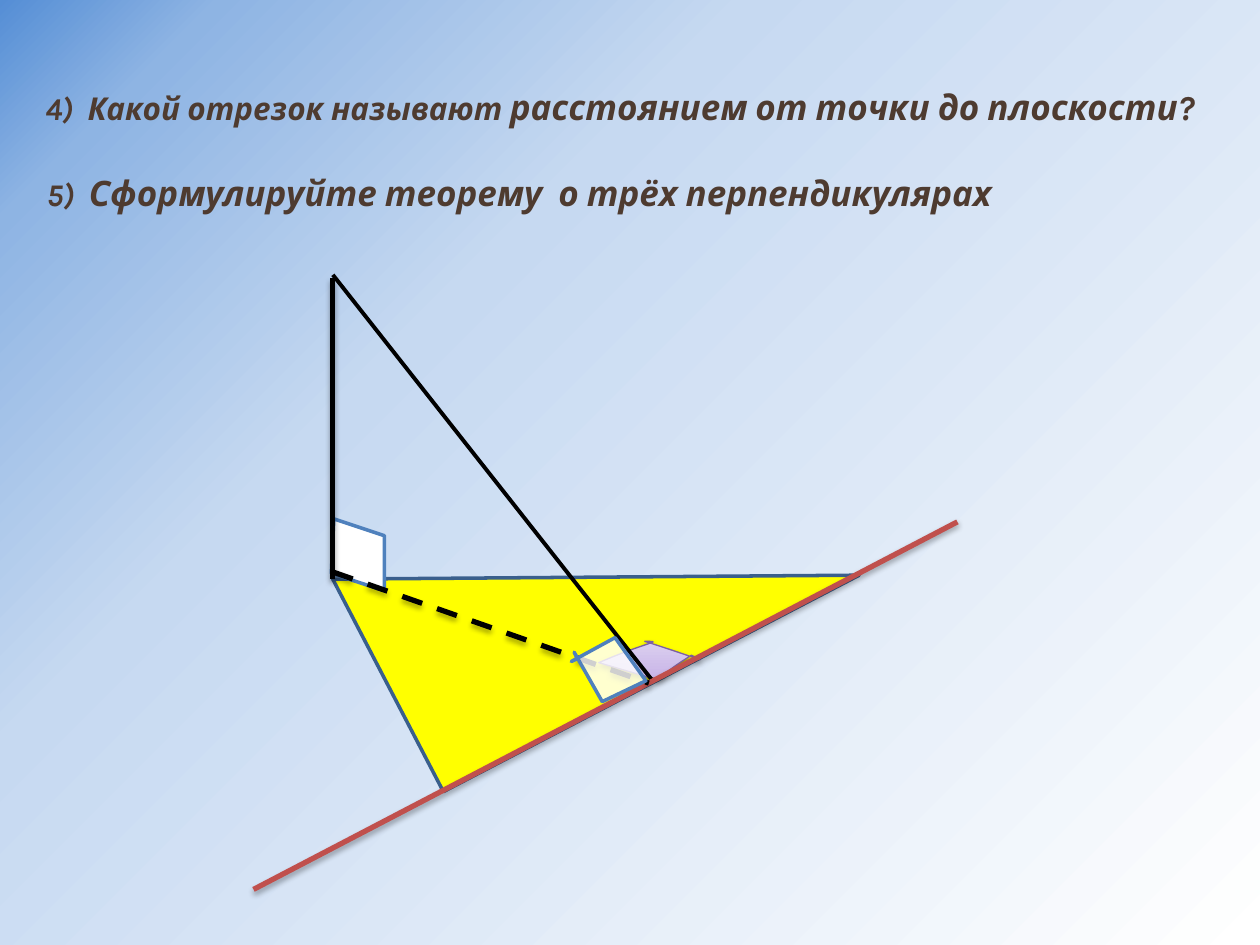
from dataclasses import dataclass
from typing import Optional

from lxml import etree
from pptx import Presentation
from pptx.dml.color import RGBColor
from pptx.enum.dml import MSO_LINE
from pptx.enum.shapes import MSO_CONNECTOR, MSO_SHAPE
from pptx.enum.text import MSO_AUTO_SIZE
from pptx.oxml.ns import qn
from pptx.util import Cm, Pt

STRAIGHT = MSO_CONNECTOR.STRAIGHT
RIGHT_TRIANGLE = MSO_SHAPE.RIGHT_TRIANGLE
DASH = MSO_LINE.DASH
FIT_SHAPE = MSO_AUTO_SIZE.SHAPE_TO_FIT_TEXT
FONT = "Karla"
CURVE_STEPS = 10
COLORS = {
    "text": "4E3B30", "plane": "FFFF00", "plane_edge": "3A5F8C", "black": "000000",
    "red": "C0504D", "white": "FFFFFF", "blue": "4F81BD", "violet": "7D60A0",
}
SKY_STOPS = [(0, "558ED5"), (10, "8EB4E3"), (34, "C6D9F1"), (100, "FFFFFF")]
LILAC_STOPS = [(0, "C9B5E8"), (88, "D8CBEE"), (100, "F0EAF9")]

Point = tuple[float, float]


@dataclass
class Question:
    left: float
    top: float
    width: float
    wording: list[tuple[str, int]]


@dataclass
class Segment:
    start: Point
    end: Point
    color: str
    weight: float
    shadow: bool = True
    dashed: bool = False


@dataclass
class Outline:
    points: list[Point]
    edge: str
    weight: float
    opacity: int = 100
    rotation: float = 0
    stops: Optional[list[tuple[int, str]]] = None
    shadow: bool = False


def rgb(name: str) -> RGBColor:
    return RGBColor.from_string(COLORS[name])


def child(parent, tag: str, **attributes):
    return etree.SubElement(parent, qn(tag), {key: str(value) for key, value in attributes.items()})


def fill_gradient(fill, owner, stops: list[tuple[int, str]], circular: bool) -> None:
    fill.gradient()
    gradient = next(owner.iter(qn("a:gradFill")))
    for element in list(gradient):
        gradient.remove(element)
    stop_list = child(gradient, "a:gsLst")
    for position, color in stops:
        stop = child(stop_list, "a:gs", pos=position * 1000)
        child(stop, "a:srgbClr", val=color)
    if circular:
        route = child(gradient, "a:path", path="circle")
        child(route, "a:fillToRect", r=100000, b=100000)
    else:
        child(gradient, "a:lin", ang=16200000, scaled=1)


def set_effects(item, shadow: bool, opacity: int = 35) -> None:
    effects = child(item.element.spPr, "a:effectLst")
    if shadow:
        outer = child(effects, "a:outerShdw", blurRad=Pt(3.1), dist=Pt(1.8),
                      dir=5400000, rotWithShape=0)
        color = child(outer, "a:srgbClr", val=COLORS["black"])
        child(color, "a:alpha", val=opacity * 1000)


def curve(start: Point, first: Point, second: Point, end: Point) -> list[Point]:
    points = []
    for step in range(1, CURVE_STEPS + 1):
        t = step / CURVE_STEPS
        weights = ((1 - t) ** 3, 3 * t * (1 - t) ** 2, 3 * t * t * (1 - t), t ** 3)
        x, y = (sum(weight * value for weight, value in zip(weights, axis))
                for axis in zip(start, first, second, end))
        points.append((x, y))
    return points


def add_question(slide, question: Question) -> None:
    box = slide.shapes.add_textbox(Cm(question.left), Cm(question.top), Cm(question.width), Cm(1.12))
    frame = box.text_frame
    frame.word_wrap = False
    frame.auto_size = FIT_SHAPE
    para = frame.paragraphs[0]
    para.space_before = Pt(4)
    properties = para._p.get_or_add_pPr()
    properties.set("marL", str(Cm(0.95)))
    properties.set("indent", str(-Cm(0.95)))
    for text, size in question.wording:
        span = para.add_run()
        span.text = text
        span.font.name = FONT
        span.font.size = Pt(size)
        span.font.bold = span.font.italic = True
        span.font.color.rgb = rgb("text")


def add_plane(slide) -> None:
    plane = slide.shapes.add_shape(RIGHT_TRIANGLE, Cm(7.29), Cm(9.22), Cm(9.45), Cm(4.83))
    plane.rotation = 332.5
    plane.fill.solid()
    plane.fill.fore_color.rgb = rgb("plane")
    plane.line.color.rgb = rgb("plane_edge")
    plane.line.width = Pt(2)
    plane.shadow.inherit = False


def add_segment(slide, segment: Segment) -> None:
    ends = [Cm(value) for value in (*segment.start, *segment.end)]
    connector = slide.shapes.add_connector(STRAIGHT, *ends)
    connector.line.color.rgb = rgb(segment.color)
    connector.line.width = Pt(segment.weight)
    if segment.dashed:
        connector.line.dash_style = DASH
    set_effects(connector, segment.shadow)


def add_outline(slide, outline: Outline) -> None:
    points = [(Cm(x), Cm(y)) for x, y in outline.points]
    builder = slide.shapes.build_freeform(*points[0])
    builder.add_line_segments(points[1:], close=True)
    shape = builder.convert_to_shape()
    shape.rotation = outline.rotation
    if outline.stops:
        fill_gradient(shape.fill, shape.element, outline.stops, circular=False)
    else:
        shape.fill.solid()
        shape.fill.fore_color.rgb = rgb("white")
        if outline.opacity < 100:
            color = next(shape.element.spPr.iter(qn("a:srgbClr")))
            child(color, "a:alpha", val=outline.opacity * 1000)
    shape.line.color.rgb = rgb(outline.edge)
    shape.line.width = Pt(outline.weight)
    set_effects(shape, outline.shadow, opacity=38)


QUESTIONS = [
    Question(0.66, 1.6, 24.51, [("4)  Какой отрезок называют ", 18),
                                ("расстоянием от точки до плоскости?", 20)]),
    Question(0.69, 3.33, 20.12, [("5)  ", 18),
                                 ("Сформулируйте теорему  о трёх перпендикулярах", 20)]),
]
LEFT, TOP, RIGHT, BOTTOM = (12.07, 13.36), (13, 12.93), (13.94, 13.21), (13.13, 13.67)
LILAC_ANGLE = Outline(
    [LEFT, *curve(LEFT, (13.06, 12.93), (13.41, 12.93), TOP),
     *curve(TOP, (14.05, 13.26), (14.35, 13.41), RIGHT),
     *curve(RIGHT, (13.16, 13.69), (13.46, 13.67), BOTTOM)],
    "violet", 0.75, stops=LILAC_STOPS, shadow=True)
UPPER_ANGLE = Outline([(6.68, 11.56), (7.75, 11.91), (7.75, 10.8), (6.73, 10.46)], "blue", 2)
LOWER_ANGLE = Outline(
    [(11.56, 13.18), (12.17, 14.15), (13.03, 13.69), (12.37, 12.85), (11.51, 13.37), (11.63, 13.31)],
    "blue", 2, opacity=81, rotation=2.6)
OBLIQUE = Segment((6.71, 5.54), (13.13, 13.69), "black", 2.25, shadow=False)
PLANE_LINE = Segment((5.11, 17.93), (19.3, 10.52), "red", 3)
PERPENDICULAR = Segment((6.71, 5.61), (6.71, 11.68), "black", 3)
PROJECTION = Segment((6.71, 11.53), (13.08, 13.77), "black", 3, dashed=True)


def main() -> None:
    deck = Presentation()
    deck.slide_width, deck.slide_height = Cm(25.4), Cm(19.05)
    slide = deck.slides.add_slide(deck.slide_layouts[6])
    fill_gradient(slide.background.fill, slide.element, SKY_STOPS, circular=True)
    for question in QUESTIONS:
        add_question(slide, question)
    add_plane(slide)
    for figure in (LILAC_ANGLE, OBLIQUE, PLANE_LINE, UPPER_ANGLE, PERPENDICULAR, PROJECTION, LOWER_ANGLE):
        if isinstance(figure, Segment):
            add_segment(slide, figure)
        else:
            add_outline(slide, figure)
    deck.save("out.pptx")


if __name__ == "__main__":
    main()
